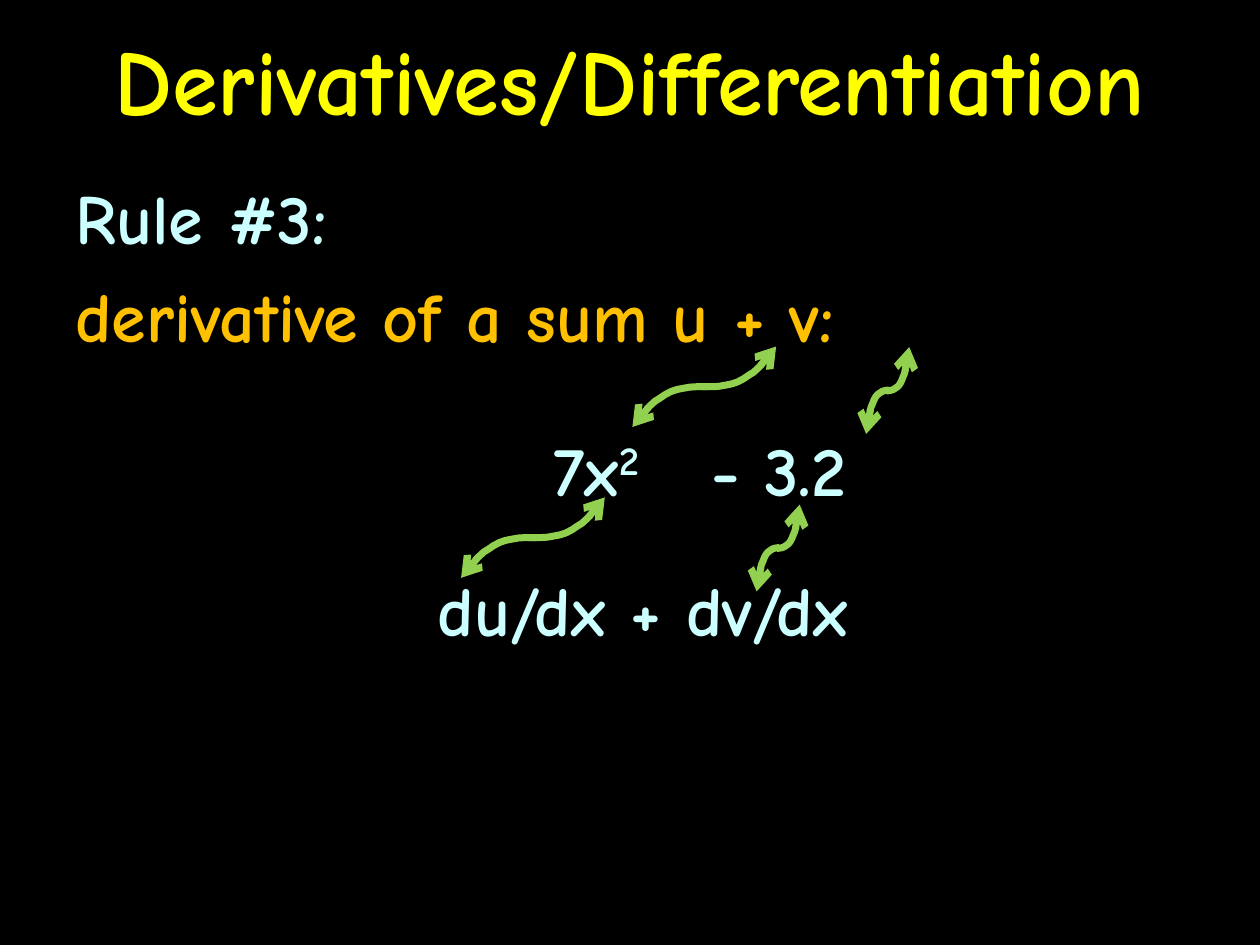
"""Build the slide on the derivative of a sum."""
from lxml import etree
from pptx import Presentation
from pptx.dml.color import RGBColor
from pptx.enum.text import MSO_ANCHOR, MSO_AUTO_SIZE, PP_ALIGN
from pptx.oxml.ns import qn
from pptx.util import Pt

MID = MSO_ANCHOR.MIDDLE
FIXED = MSO_AUTO_SIZE.NONE
LEFT, CENTER = PP_ALIGN.LEFT, PP_ALIGN.CENTER
FONT = "Comic Neue"
HUES = {"back": "000000", "title": "FFFF00", "text": "CCFFFF",
        "rule": "FFC000", "arrow": "92D050"}


def style(para, hue, size=40):
    font = para.font
    font.name, font.size, font.bold = FONT, Pt(size), True
    font.color.rgb = RGBColor.from_string(HUES[hue])


def add_box(left, top, width, height):
    box = slide.shapes.add_textbox(Pt(left), Pt(top), Pt(width), Pt(height))
    box.text_frame.word_wrap = True
    return box.text_frame


deck = Presentation()
deck.slide_width, deck.slide_height = Pt(720), Pt(540)
slide = deck.slides.add_slide(deck.slide_layouts[5])
fill = slide.background.fill
fill.solid()
fill.fore_color.rgb = RGBColor.from_string(HUES["back"])

title = slide.shapes.title
title.left, title.top, title.width, title.height = Pt(0), Pt(0), Pt(720), Pt(90)
frame = title.text_frame
frame.text = "Derivatives/Differentiation"
frame.auto_size, frame.vertical_anchor = FIXED, MID
frame.paragraphs[0].alignment = CENTER
style(frame.paragraphs[0], "title", 53)

body = add_box(36, 96.4, 648, 443.6)
lines = [("Rule #3:", "text", LEFT, 0),
         ("derivative of a sum u + v:", "rule", LEFT, 8),
         (" du/dx + dv/dx", "text", CENTER, 120)]
for i, (text, hue, align, gap) in enumerate(lines):
    para = body.add_paragraph() if i else body.paragraphs[0]
    para.text = text
    para.alignment, para.space_before = align, Pt(gap)
    style(para, hue)

for left, width, text, power in [(399.2, 129, "- 3.2", ""), (309, 117, "7x", "2")]:
    para = add_box(left, 240.3, width, 55.4).paragraphs[0]
    para.text = text
    style(para, "text")
    if power:
        run = para.add_run()
        run.text = power
        run.font._element.set("baseline", "30000")

curve = [(0, 1), (0.05, 0.86), (0.11, 0.71), (0.18, 0.58), (0.23, 0.48),
         (0.3, 0.36), (0.36, 0.29), (0.43, 0.2), (0.51, 0.12),
         (0.59, 0.07), (0.67, 0.04), (0.76, 0.01), (0.85, 0), (1, 0)]
arrows = [(361.4, 221, 43.2, 38.9, -23, 0),
          (263.5, 307.2, 43.2, 38.9, -23, 0),
          (493.2, 223.9, 16.6, 11.5, -24.5, 351.7),
          (430.6, 313.9, 16.6, 11.5, -24.5, 351.7)]
for left, top, wide, right, up, turn in arrows:
    group = slide.shapes.add_group_shape()
    for i in range(2):
        spots = [(Pt(left + i * right + wide * x), Pt(top + i * up + 23 * y))
                 for x, y in curve]
        pen = group.shapes.build_freeform(*spots[0])
        pen.add_line_segments(spots[1:], close=False)
        half = pen.convert_to_shape()
        half.shadow.inherit = False
        half.rotation = (turn + 180 * i) % 360
        half.fill.background()
        half.line.width = Pt(4)
        half.line.color.rgb = RGBColor.from_string(HUES["arrow"])
        line = half.line._get_or_add_ln()
        etree.SubElement(line, qn("a:round"))
        etree.SubElement(line, qn("a:headEnd"), type="arrow")

deck.save("out.pptx")
